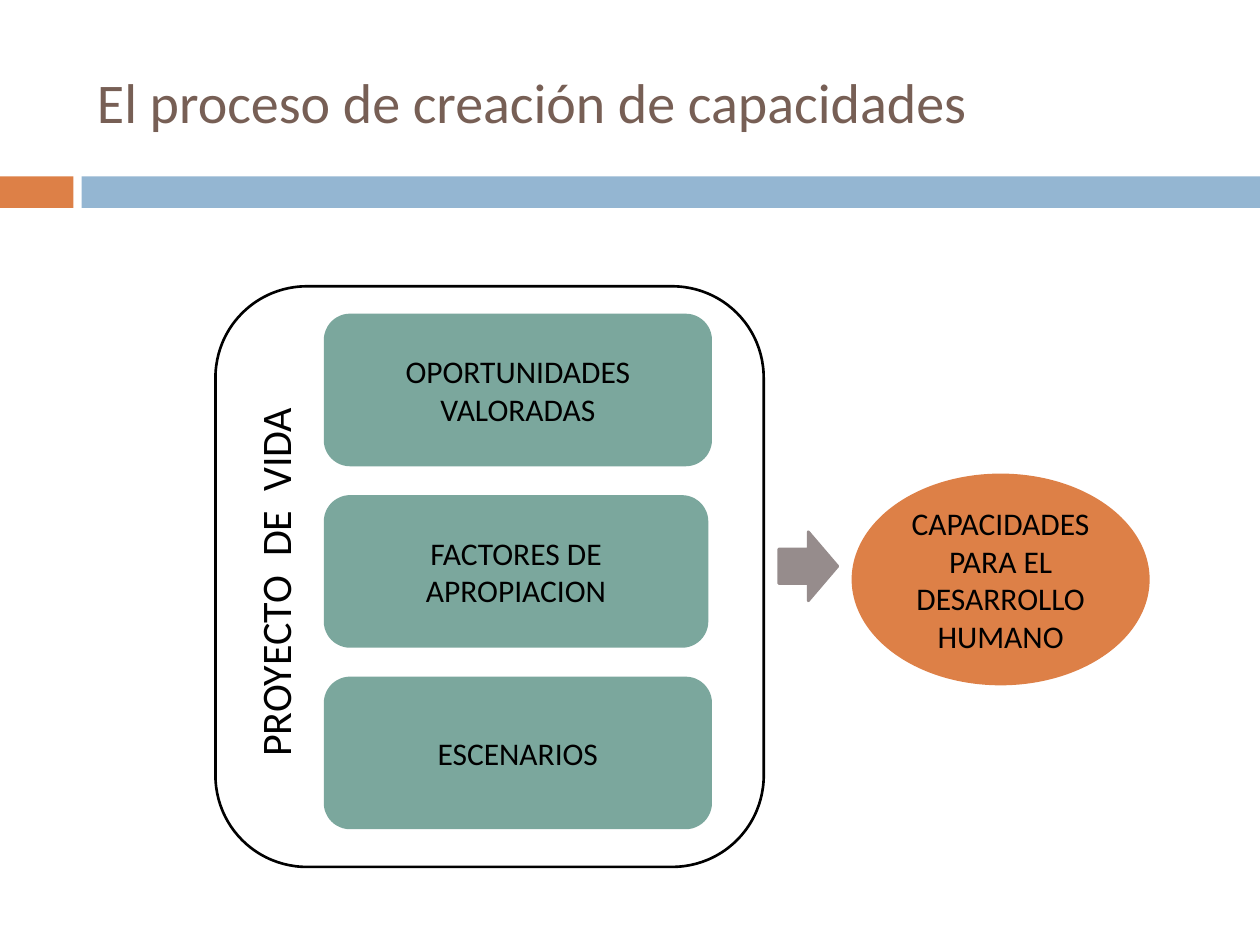
from pptx import Presentation
from pptx.dml.color import RGBColor
from pptx.enum.shapes import MSO_SHAPE
from pptx.enum.text import MSO_ANCHOR, PP_ALIGN
from pptx.util import Pt

# Content
TITLE = "El proceso de creación de capacidades"
SIDE_LABEL = "PROYECTO  DE  VIDA"
CARDS = [  # lines, width
    (["OPORTUNIDADES", "VALORADAS"], 220.3),
    (["FACTORES DE APROPIACION"], 218.2),
    (["ESCENARIOS"], 220.3),
]
RESULT = ["CAPACIDADES", "PARA EL DESARROLLO HUMANO"]

# Style
FONT = "Calibri"
COLORS = {
    "title": "775F55", "text": "000000", "orange": "DD8047",
    "blue": "94B6D2", "green": "7BA79D", "gray": "968C8C",
}
CARD_LEFT, CARD_TOP, CARD_HEIGHT, CARD_STEP = 185.8, 180, 85.7, 103.7


def color(name):
    return RGBColor.from_string(COLORS[name])


def write(shape, lines, size, ink="text", align=PP_ALIGN.CENTER,
          anchor=MSO_ANCHOR.MIDDLE):
    frame = shape.text_frame
    frame.word_wrap = True
    frame.vertical_anchor = anchor
    for index, line in enumerate(lines):
        para = frame.paragraphs[0] if index == 0 else frame.add_paragraph()
        para.alignment = align
        span = para.add_run()
        span.text = line
        span.font.name = FONT
        span.font.size = Pt(size)
        span.font.color.rgb = color(ink)


def add_shape(kind, left, top, width, height, fill=None, line=None):
    shape = page.shapes.add_shape(kind, Pt(left), Pt(top), Pt(width), Pt(height))
    shape.shadow.inherit = False
    if fill:
        shape.fill.solid()
        shape.fill.fore_color.rgb = color(fill)
    else:
        shape.fill.background()
    if line:
        shape.line.color.rgb = color(line)
        shape.line.width = Pt(1.5)
    else:
        shape.line.fill.background()
    return shape


deck = Presentation()
deck.slide_width, deck.slide_height = Pt(720), Pt(540)
page = deck.slides.add_slide(deck.slide_layouts[5])

# Title and the band under it
title = page.shapes.title
title.left, title.top, title.width, title.height = Pt(48.2), Pt(15.1), Pt(636.5), Pt(85)
write(title, [TITLE], 32, "title", PP_ALIGN.LEFT)
add_shape(MSO_SHAPE.RECTANGLE, 0, 100.8, 42, 18, "orange")
add_shape(MSO_SHAPE.RECTANGLE, 46.6, 100.8, 673.4, 18, "blue")

# Life project frame with its cards
add_shape(MSO_SHAPE.ROUNDED_RECTANGLE, 123.1, 163.6, 313.3, 331.8, line="text")
for row, (lines, width) in enumerate(CARDS):
    card = add_shape(MSO_SHAPE.ROUNDED_RECTANGLE, CARD_LEFT, CARD_TOP + row * CARD_STEP,
                     width, CARD_HEIGHT, "green", "green")
    write(card, lines, 18)

# Label turned to read upwards
label = page.shapes.add_textbox(Pt(20.9), Pt(314.6), Pt(272.2), Pt(36.3))
label.rotation = 270
write(label, [SIDE_LABEL], 24, anchor=MSO_ANCHOR.TOP)

# Arrow to the result
add_shape(MSO_SHAPE.RIGHT_ARROW, 445, 303.8, 33.8, 39.6, "gray", "gray")
result = add_shape(MSO_SHAPE.OVAL, 487.4, 271.4, 168.8, 119.5, "orange", "orange")
write(result, RESULT, 18)

deck.save("out.pptx")
